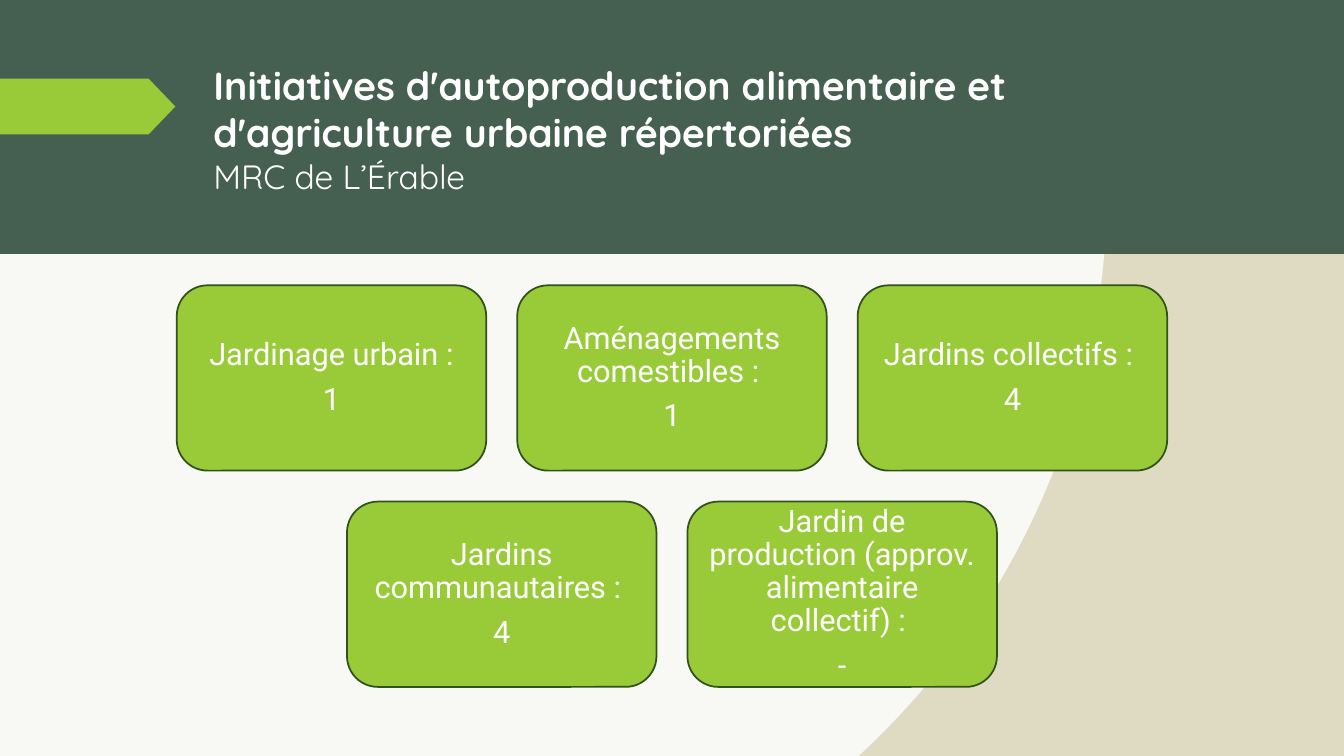
from dataclasses import dataclass

from lxml import etree
from pptx import Presentation
from pptx.dml.color import RGBColor
from pptx.enum.shapes import MSO_SHAPE
from pptx.enum.text import MSO_ANCHOR, PP_ALIGN
from pptx.oxml.ns import qn
from pptx.util import Cm, Pt

RECTANGLE = MSO_SHAPE.RECTANGLE
ROUNDED = MSO_SHAPE.ROUNDED_RECTANGLE
PENTAGON = MSO_SHAPE.PENTAGON
MIDDLE = MSO_ANCHOR.MIDDLE
TOP = MSO_ANCHOR.TOP
CENTER = PP_ALIGN.CENTER

COLORS = {
    "cream": "F8F8F4",
    "sand": "DFDBC2",
    "forest": "455F51",
    "lime": "99CB38",
    "outline": "31521C",
    "white": "FFFFFF",
}

# Slide and card grid, in centimetres
PAGE_WIDTH, PAGE_HEIGHT = 33.87, 19.05
CARD_WIDTH, CARD_HEIGHT, CARD_GAP = 7.8, 4.67, 0.78
CARDS_TOP = 7.19
CARD_INSET = 0.23


@dataclass
class Card:
    label: str
    count: str


CARD_ROWS = [
    [
        Card("Jardinage urbain :", "1"),
        Card("Aménagements comestibles : ", "1"),
        Card("Jardins collectifs : ", "4"),
    ],
    [
        Card("Jardins communautaires : ", "4"),
        Card("Jardin de production (approv. alimentaire collectif) : ", "-"),
    ],
]


def color(name: str) -> RGBColor:
    return RGBColor.from_string(COLORS[name])


def paint_background(page) -> None:
    """Sharp-edged circular gradient: cream disc on sand."""
    fill = page.background.fill
    fill.gradient()
    for stop, name in zip(fill.gradient_stops, ("cream", "sand")):
        stop.color.rgb = color(name)
        stop.position = 1.0
    gradient = page.element.find(".//" + qn("a:gradFill"))
    gradient.remove(gradient.find(qn("a:lin")))
    circle = etree.SubElement(gradient, qn("a:path"), {"path": "circle"})
    etree.SubElement(circle, qn("a:fillToRect"),
                     {"l": "50000", "t": "50000", "r": "100000", "b": "100000"})


def add_box(page, kind, left: float, top: float, width: float, height: float,
            fill: str, outline: str = ""):
    box = page.shapes.add_shape(kind, Cm(left), Cm(top), Cm(width), Cm(height))
    box.shadow.inherit = False
    box.fill.solid()
    box.fill.fore_color.rgb = color(fill)
    if outline:
        box.line.color.rgb = color(outline)
        box.line.width = Pt(1.25)
    else:
        box.line.fill.background()
    return box


def add_span(para, text: str, size: float, font: str, bold: bool = False) -> None:
    span = para.add_run()
    span.text = text
    span.font.size = Pt(size)
    span.font.name = font
    span.font.bold = bold
    span.font.color.rgb = color("white")


def add_title(page) -> None:
    box = page.shapes.add_textbox(Cm(5.13), Cm(1.42), Cm(26.06), Cm(4.04))
    frame = box.text_frame
    frame.word_wrap = True
    frame.vertical_anchor = TOP
    para = frame.paragraphs[0]
    add_span(para, "Initiatives d'autoproduction alimentaire et "
                   "d'agriculture urbaine répertoriées ", 28, "Quicksand", True)
    para.add_line_break()
    add_span(para, "MRC de L’Érable", 24, "Quicksand")


def add_card(page, card: Card, left: float, top: float) -> None:
    box = add_box(page, ROUNDED, left, top, CARD_WIDTH, CARD_HEIGHT, "lime", "outline")
    frame = box.text_frame
    frame.word_wrap = True
    frame.vertical_anchor = MIDDLE
    frame.margin_left = frame.margin_right = Cm(CARD_INSET)
    frame.margin_top = frame.margin_bottom = Cm(CARD_INSET)
    for index, text in enumerate((card.label, card.count)):
        para = frame.add_paragraph() if index else frame.paragraphs[0]
        para.alignment = CENTER
        para.line_spacing = 0.9
        para.space_after = Pt(8)
        add_span(para, text, 22, "Roboto")


def main() -> None:
    deck = Presentation()
    deck.slide_width, deck.slide_height = Cm(PAGE_WIDTH), Cm(PAGE_HEIGHT)
    page = deck.slides.add_slide(deck.slide_layouts[6])
    paint_background(page)

    # Header band, title and side marker
    add_box(page, RECTANGLE, 0, 0, PAGE_WIDTH, 6.4, "forest")
    add_title(page)
    marker = add_box(page, PENTAGON, 0, 1.98, 4.42, 1.41, "lime")
    marker.adjustments[0] = 0.48

    # Cards, each row centred on the slide
    for row_index, row in enumerate(CARD_ROWS):
        row_width = len(row) * (CARD_WIDTH + CARD_GAP) - CARD_GAP
        row_left = (PAGE_WIDTH - row_width) / 2
        top = CARDS_TOP + row_index * (CARD_HEIGHT + CARD_GAP)
        for index, card in enumerate(row):
            add_card(page, card, row_left + index * (CARD_WIDTH + CARD_GAP), top)

    deck.save("out.pptx")


if __name__ == "__main__":
    main()
